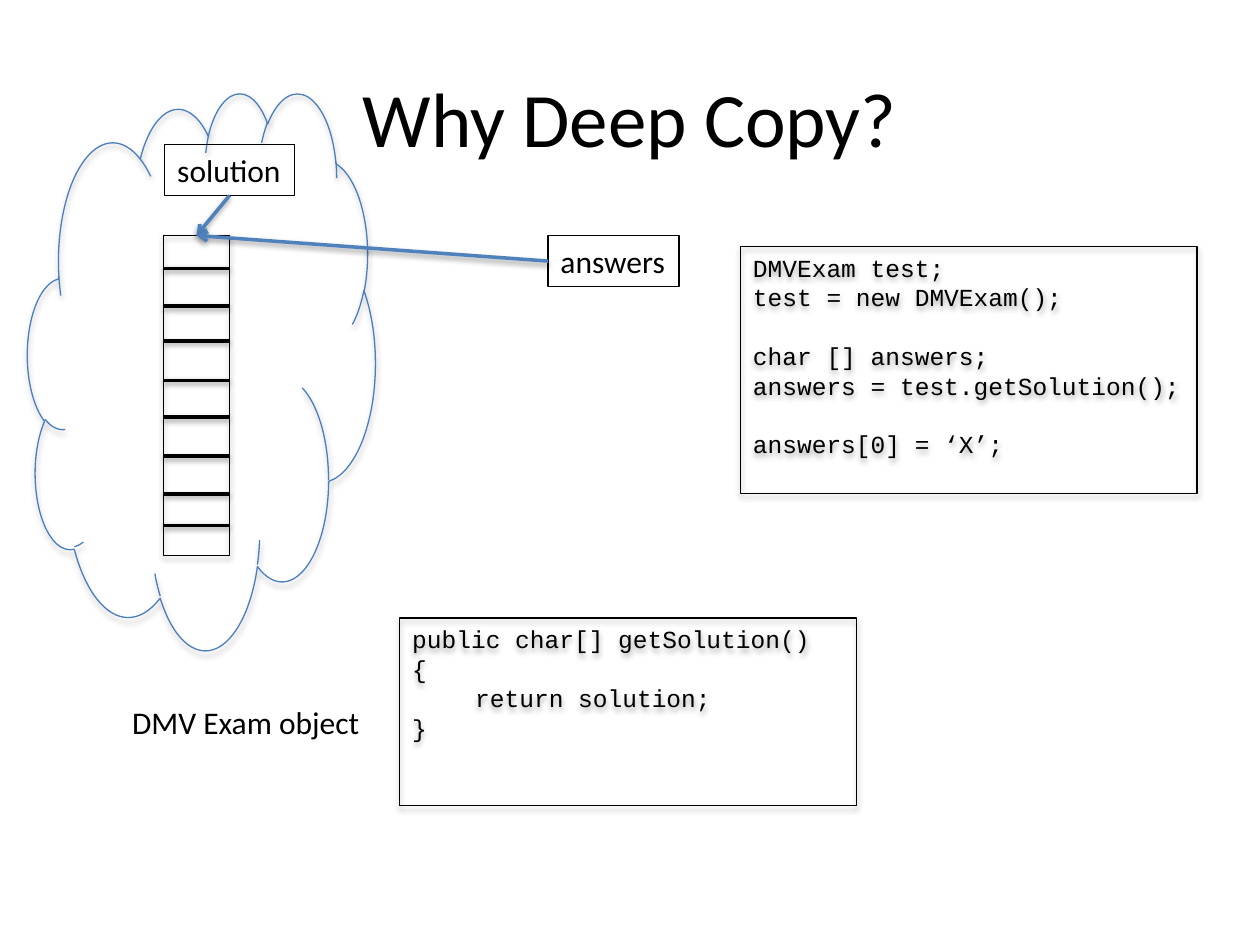
"""Build the slide that shows two references sharing one array."""
from dataclasses import dataclass

import lxml.etree
import pptx
import pptx.dml.color
import pptx.enum.shapes
import pptx.enum.text
import pptx.oxml
import pptx.oxml.ns
import pptx.util

Pt = pptx.util.Pt
BLACK = "000000"
CLOUD_BLUE = "4B7EBC"
ARROW_BLUE = "4F81BD"
CODE_LINE_HEIGHT = 16.8


@dataclass(frozen=True)
class Box:
    left: float
    top: float
    width: float
    height: float

    def lengths(self) -> tuple:
        return Pt(self.left), Pt(self.top), Pt(self.width), Pt(self.height)


@dataclass(frozen=True)
class Label:
    text: str
    box: Box
    outlined: bool


@dataclass(frozen=True)
class CodeLine:
    text: str
    blank_lines_before: int = 0
    indent: float = 0


@dataclass(frozen=True)
class CodeBlock:
    box: Box
    lines: tuple[CodeLine, ...]


@dataclass(frozen=True)
class Arrow:
    start: tuple[float, float]
    end: tuple[float, float]


ARRAY_BOX = Box(93.6, 134.6, 37.4, 182.9)
DIVIDER_TOPS = (153.4, 175, 194.8, 217.4, 238.3, 260.6, 282.2, 300.2)
CLOUD_BOX = Box(15.8, 52.6, 198.7, 318.2)
ARRAY_TOP_CENTRE = (112.3, 134.6)

OBJECT_LABEL = Label("DMV Exam object", Box(68.4, 398.2, 146.2, 29.1), False)
SOLUTION_LABEL = Label("solution", Box(94.2, 82.6, 74.2, 29.1), True)
ANSWERS_LABEL = Label("answers", Box(313.2, 134.6, 74.9, 29.1), True)

CODE_BLOCKS = (
    CodeBlock(Box(423.2, 141, 260.8, 141.1), (
        CodeLine("DMVExam test;"),
        CodeLine("test = new DMVExam();"),
        CodeLine("char [] answers;", blank_lines_before=1),
        CodeLine("answers = test.getSolution();"),
        CodeLine("answers[0] = ‘X’;", blank_lines_before=1),
    )),
    CodeBlock(Box(228.5, 353.2, 260.8, 107.3), (
        CodeLine("public char[] getSolution()"),
        CodeLine("{"),
        CodeLine("return solution;", indent=36),
        CodeLine("}"),
    )),
)
SOLUTION_ARROW = Arrow((131.2, 111.7), ARRAY_TOP_CENTRE)
ANSWERS_ARROW = Arrow((313.2, 149.2), ARRAY_TOP_CENTRE)


def color(value: str) -> pptx.dml.color.RGBColor:
    return pptx.dml.color.RGBColor.from_string(value)


def set_line(shape, line_color: str, width: float) -> None:
    shape.line.color.rgb = color(line_color)
    shape.line.width = Pt(width)


def set_font(paragraph, name: str, size: float) -> None:
    paragraph.font.name = name
    paragraph.font.size = Pt(size)
    paragraph.font.color.rgb = color(BLACK)


def add_shadow(shape, distance: float, opacity: int) -> None:
    namespace = pptx.oxml.ns.nsdecls("a")
    shape._element.spPr.append(pptx.oxml.parse_xml(
        f'<a:effectLst {namespace}><a:outerShdw blurRad="{Pt(3.15)}" '
        f'dist="{Pt(distance)}" dir="5400000" rotWithShape="0">'
        f'<a:srgbClr val="{BLACK}"><a:alpha val="{opacity * 1000}"/></a:srgbClr>'
        "</a:outerShdw></a:effectLst>"))


def add_outline(shapes, kind, box: Box, line_color: str):
    shape = shapes.add_shape(kind, *box.lengths())
    shape.fill.background()
    set_line(shape, line_color, 0.75)
    add_shadow(shape, 1.8, 35)
    return shape


def add_line(shapes, start: tuple, end: tuple, line_color: str):
    connector = shapes.add_connector(
        pptx.enum.shapes.MSO_CONNECTOR.STRAIGHT,
        *(Pt(value) for value in (*start, *end)))
    set_line(connector, line_color, 2)
    add_shadow(connector, 1.6, 38)
    return connector


def add_arrow(shapes, arrow: Arrow) -> None:
    connector = add_line(shapes, arrow.start, arrow.end, ARROW_BLUE)
    tail = lxml.etree.SubElement(
        connector.line._get_or_add_ln(), pptx.oxml.ns.qn("a:tailEnd"))
    tail.set("type", "arrow")


def add_label(shapes, label: Label) -> None:
    shape = shapes.add_textbox(*label.box.lengths())
    if label.outlined:
        set_line(shape, BLACK, 0.75)
    frame = shape.text_frame
    frame.word_wrap = False
    frame.auto_size = pptx.enum.text.MSO_AUTO_SIZE.SHAPE_TO_FIT_TEXT
    frame.text = label.text
    set_font(frame.paragraphs[0], "Calibri", 18)


def add_code(shapes, block: CodeBlock) -> None:
    rectangle = pptx.enum.shapes.MSO_SHAPE.RECTANGLE
    frame = add_outline(shapes, rectangle, block.box, BLACK).text_frame
    frame.word_wrap = True
    frame.vertical_anchor = pptx.enum.text.MSO_ANCHOR.TOP
    frame.text = "\n".join(line.text for line in block.lines)
    for paragraph, line in zip(frame.paragraphs, block.lines):
        set_font(paragraph, "Courier New", 14)
        paragraph.alignment = pptx.enum.text.PP_ALIGN.LEFT
        if line.blank_lines_before:
            paragraph.space_before = Pt(line.blank_lines_before * CODE_LINE_HEIGHT)
        if line.indent:
            paragraph._p.get_or_add_pPr().set("marL", str(Pt(line.indent)))


def add_array(shapes) -> None:
    group = shapes.add_group_shape().shapes
    add_outline(group, pptx.enum.shapes.MSO_SHAPE.RECTANGLE, ARRAY_BOX, BLACK)
    right = ARRAY_BOX.left + ARRAY_BOX.width
    for top in DIVIDER_TOPS:
        add_line(group, (ARRAY_BOX.left, top), (right, top), BLACK)


def add_title(slide) -> None:
    title = slide.shapes.title
    title.left, title.top, title.width, title.height = Box(36, 21.6, 648, 90).lengths()
    title.text_frame.text = "Why Deep Copy?"
    title.text_frame.vertical_anchor = pptx.enum.text.MSO_ANCHOR.MIDDLE
    paragraph = title.text_frame.paragraphs[0]
    paragraph.alignment = pptx.enum.text.PP_ALIGN.CENTER
    set_font(paragraph, "Calibri", 44)


def main() -> None:
    presentation = pptx.Presentation()
    presentation.slide_width, presentation.slide_height = Pt(720), Pt(540)
    slide = presentation.slides.add_slide(presentation.slide_layouts[5])
    shapes = slide.shapes
    add_title(slide)
    add_array(shapes)
    add_outline(shapes, pptx.enum.shapes.MSO_SHAPE.CLOUD, CLOUD_BOX, CLOUD_BLUE)
    add_label(shapes, OBJECT_LABEL)
    add_label(shapes, SOLUTION_LABEL)
    add_arrow(shapes, SOLUTION_ARROW)
    for block in CODE_BLOCKS:
        add_code(shapes, block)
    add_label(shapes, ANSWERS_LABEL)
    add_arrow(shapes, ANSWERS_ARROW)
    presentation.save("out.pptx")


if __name__ == "__main__":
    main()
